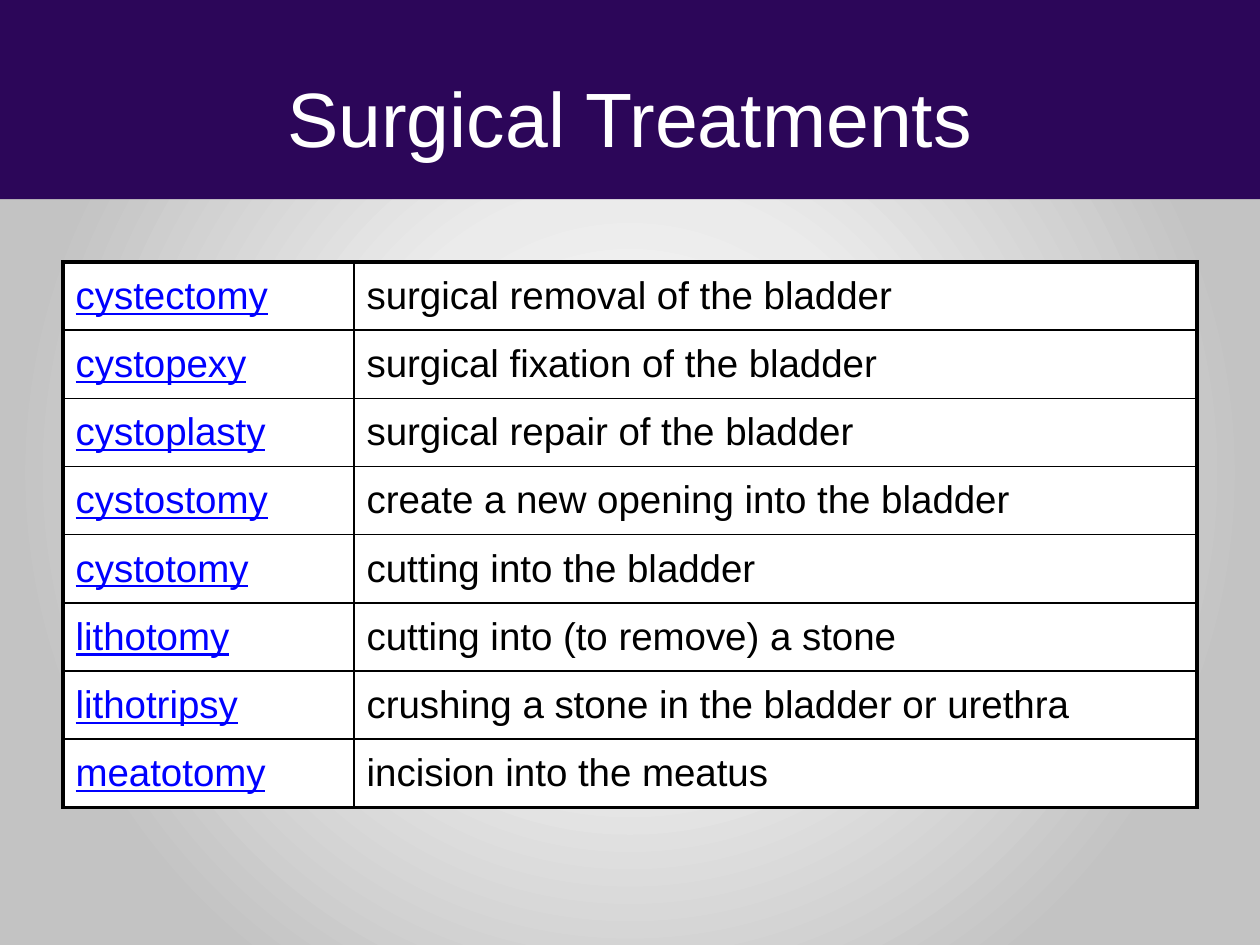
from lxml import etree
from pptx import Presentation
from pptx.dml.color import RGBColor
from pptx.enum import shapes, text
from pptx.oxml import parse_xml
from pptx.oxml.ns import nsdecls, qn
from pptx.util import Inches, Pt

PURPLE = RGBColor(0x2C, 0x06, 0x59)
WHITE = RGBColor(0xFF, 0xFF, 0xFF)
BLACK = RGBColor(0, 0, 0)
BLUE = RGBColor(0, 0, 0xFF)
PALE = RGBColor(0xEB, 0xEB, 0xEB)
GREY = RGBColor(0xC3, 0xC3, 0xC3)

THICK, THIN = 2.25, 1
TERM = {"size": Pt(22), "color": BLUE, "underline": True}
MEANING = {"size": Pt(22), "color": BLACK, "underline": False}
TITLE = {"size": Pt(44), "color": WHITE}

ROWS = [
    ("cystectomy", "surgical removal of the bladder"),
    ("cystopexy", "surgical fixation of the bladder"),
    ("cystoplasty", "surgical repair of the bladder"),
    ("cystostomy", "create a new opening into the bladder"),
    ("cystotomy", "cutting into the bladder"),
    ("lithotomy", "cutting into (to remove) a stone"),
    ("lithotripsy", "crushing a stone in the bladder or urethra"),
    ("meatotomy", "incision into the meatus"),
]


class Deck:
    """Holds the style and the current slide."""

    font = "Arial"

    def __init__(self, prs):
        self.slide = prs.slides.add_slide(prs.slide_layouts[6])

    def glow(self, stops):
        """Fill the background with a gradient spreading from the centre."""
        self.slide.background.fill.gradient()
        old = self.slide.element.find(".//" + qn("a:gradFill"))
        marks = "".join(
            f'<a:gs pos="{pos * 1000}"><a:srgbClr val="{color}"/></a:gs>'
            for pos, color in stops)
        new = parse_xml(
            f'<a:gradFill {nsdecls("a")} rotWithShape="1"><a:gsLst>{marks}</a:gsLst>'
            '<a:path path="circle"><a:fillToRect l="50000" t="50000" r="50000" '
            'b="50000"/></a:path></a:gradFill>')
        old.getparent().replace(old, new)

    def band(self, box, color):
        shape = self.slide.shapes.add_shape(
            shapes.MSO_SHAPE.RECTANGLE, *map(Inches, box))
        shape.shadow.inherit = False
        shape.fill.solid()
        shape.fill.fore_color.rgb = color
        shape.line.fill.background()

    def label(self, frame, words, style):
        run = frame.paragraphs[0].add_run()
        run.text = words
        run.font.name = self.font
        for name, value in style.items():
            if name == "color":
                run.font.color.rgb = value
            else:
                setattr(run.font, name, value)

    def title(self, box, words):
        frame = self.slide.shapes.add_textbox(*map(Inches, box)).text_frame
        frame.word_wrap = True
        frame.vertical_anchor = text.MSO_ANCHOR.MIDDLE
        self.label(frame, words, TITLE)
        frame.paragraphs[0].alignment = text.PP_ALIGN.CENTER

    def edges(self, cell, widths):
        """Draw cell borders; widths run left, right, top, bottom."""
        props = cell._tc.get_or_add_tcPr()
        for spot, (side, width) in enumerate(zip("LRTB", widths)):
            line = etree.Element(qn(f"a:ln{side}"), w=str(Pt(width)))
            fill = etree.SubElement(line, qn("a:solidFill"))
            etree.SubElement(fill, qn("a:srgbClr"), val=str(BLACK))
            props.insert(spot, line)

    def table(self, box, cols, rows):
        grid = self.slide.shapes.add_table(
            len(rows), len(cols), *map(Inches, box)).table
        grid.first_row = grid.horz_banding = False
        for col, width in zip(grid.columns, cols):
            col.width = Inches(width)
        last = len(rows) - 1
        for r, row in enumerate(rows):
            for c, (words, style) in enumerate(zip(row, (TERM, MEANING))):
                cell = grid.cell(r, c)
                cell.fill.solid()
                cell.fill.fore_color.rgb = WHITE
                cell.vertical_anchor = text.MSO_ANCHOR.MIDDLE
                self.label(cell.text_frame, words, style)
                outer = (c == 0, c == len(cols) - 1, r == 0, r == last)
                self.edges(cell, [THICK if out else THIN for out in outer])


def main():
    prs = Presentation()
    prs.slide_width, prs.slide_height = Inches(10), Inches(7.5)
    deck = Deck(prs)
    deck.glow([(2, WHITE), (35, PALE), (79, GREY)])
    deck.band((0, 0, 10, 1.58), PURPLE)
    deck.title((0.5, 0.3, 9, 1.25), "Surgical Treatments")
    deck.table((0.5, 2.08, 9, 4.33), (2.31, 6.69), ROWS)
    prs.save("out.pptx")


if __name__ == "__main__":
    main()
